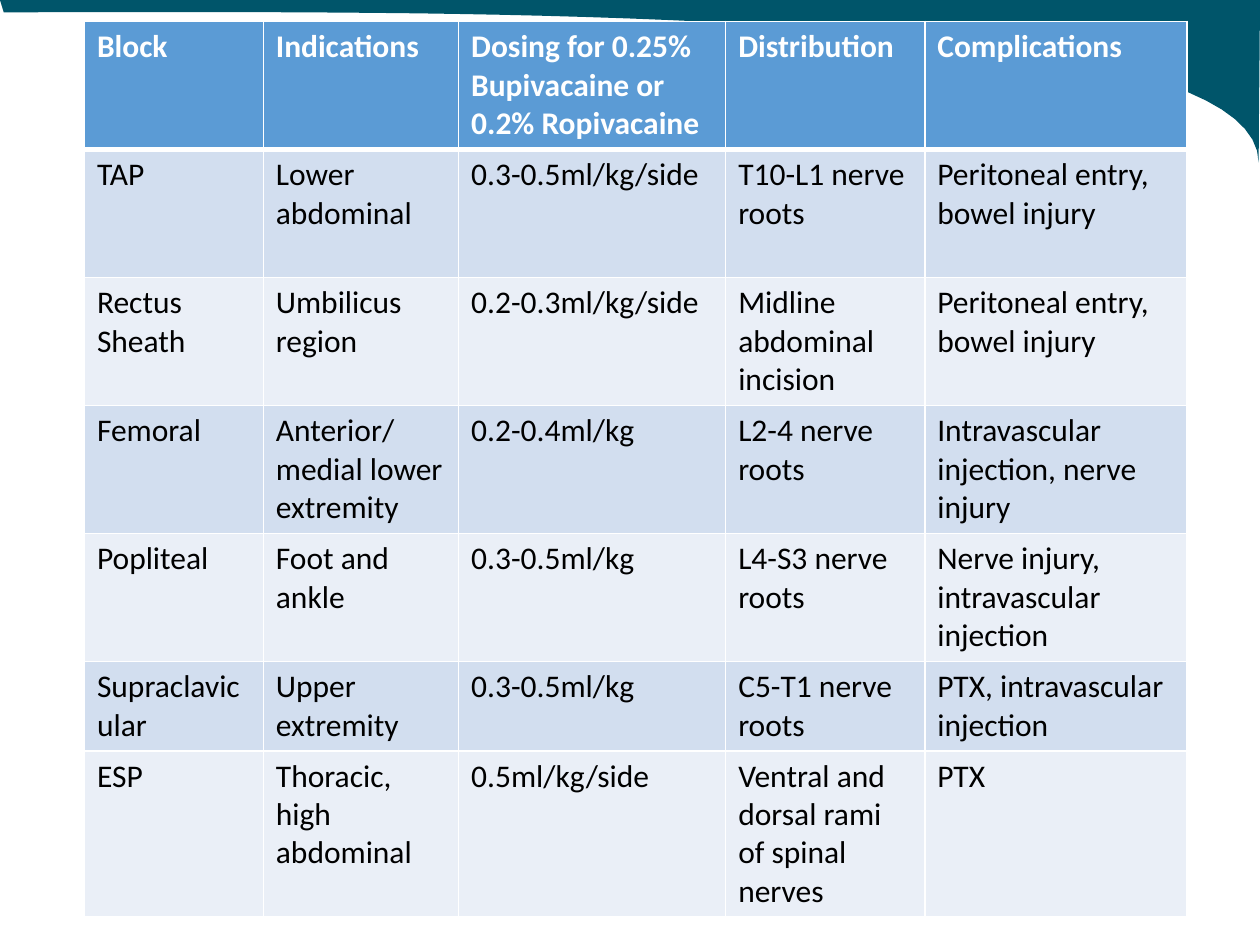
from typing import NamedTuple

import pptx
import pptx.dml.color
import pptx.oxml
import pptx.oxml.ns
import pptx.util

SLIDE_WIDTH = pptx.util.Inches(10)
SLIDE_HEIGHT = pptx.util.Inches(7.5)
FONT_NAME = "Calibri"
FONT_SIZE = 18
LINE_HEIGHT = 0.305
CELL_PADDING = 0.1
COLUMN_WIDTHS = (1.42, 1.55, 2.12, 1.58, 2.08)
HEADER_FILL = "5B9BD5"
BAND_FILLS = ("D2DEEF", "EAEFF7")
CURVE_STEPS = 40


class Point(NamedTuple):
    """A place on the slide, as shares of its width and height."""
    x: float
    y: float


class BlockRow(NamedTuple):
    lines: int
    texts: tuple[str, str, str, str, str]


ROWS = (
    BlockRow(3, ("Block", "Indications", "Dosing for 0.25% Bupivacaine or 0.2% Ropivacaine",
                 "Distribution", "Complications")),
    BlockRow(3, ("TAP", "Lower abdominal", "0.3-0.5ml/kg/side",
                 "T10-L1 nerve roots", "Peritoneal entry, bowel injury")),
    BlockRow(3, ("Rectus Sheath", "Umbilicus region", "0.2-0.3ml/kg/side",
                 "Midline abdominal incision", "Peritoneal entry, bowel injury")),
    BlockRow(3, ("Femoral", "Anterior/medial lower extremity", "0.2-0.4ml/kg",
                 "L2-4 nerve roots", "Intravascular injection, nerve injury")),
    BlockRow(3, ("Popliteal", "Foot and ankle", "0.3-0.5ml/kg",
                 "L4-S3 nerve roots", "Nerve injury, intravascular injection")),
    BlockRow(2, ("Supraclavicular", "Upper extremity", "0.3-0.5ml/kg",
                 "C5-T1 nerve roots", "PTX, intravascular injection")),
    BlockRow(4, ("ESP", "Thoracic, high abdominal", "0.5ml/kg/side",
                 "Ventral and dorsal rami of spinal nerves", "PTX")),
)


def color(value: str) -> pptx.dml.color.RGBColor:
    return pptx.dml.color.RGBColor.from_string(value)


def curve_points(*controls: Point) -> list[Point]:
    """Sample a cubic Bezier curve, leaving out its start."""
    points = []
    for step in range(1, CURVE_STEPS + 1):
        t = step / CURVE_STEPS
        weights = ((1 - t) ** 3, 3 * t * (1 - t) ** 2, 3 * t ** 2 * (1 - t), t ** 3)
        points.append(Point(
            sum(weight * point.x for weight, point in zip(weights, controls)),
            sum(weight * point.y for weight, point in zip(weights, controls)),
        ))
    return points


def add_corner_swoosh(slide) -> None:
    corner, tip, left_end = Point(1, 0), Point(0.999, 0.172), Point(0.003, 0.013)
    outline = [
        corner,
        *curve_points(corner, Point(1, 0.019), Point(0.999, 0.153), tip),
        *curve_points(tip, Point(0.998, 0), Point(0.336, 0.013), left_end),
    ]
    builder = slide.shapes.build_freeform(0, 0)
    builder.add_line_segments(
        [(point.x * SLIDE_WIDTH, point.y * SLIDE_HEIGHT) for point in outline], close=True
    )
    shape = builder.convert_to_shape()
    shape.shadow.inherit = False
    shape.fill.solid()
    shape.fill.fore_color.rgb = color("00556A")
    shape.line.fill.background()


def set_borders(cell, top: float, bottom: float) -> None:
    properties = cell._tc.get_or_add_tcPr()
    sides = (("lnL", 1), ("lnR", 1), ("lnT", top), ("lnB", bottom))
    for position, (tag, width) in enumerate(sides):
        border = pptx.oxml.parse_xml(
            f'<a:{tag} {pptx.oxml.ns.nsdecls("a")} w="{pptx.util.Pt(width)}">'
            '<a:solidFill><a:srgbClr val="FFFFFF"/></a:solidFill>'
            f'</a:{tag}>'
        )
        properties.insert(position, border)


def format_cell(cell, text: str, row_index: int) -> None:
    is_header = row_index == 0
    cell.fill.solid()
    cell.fill.fore_color.rgb = color(HEADER_FILL if is_header else BAND_FILLS[(row_index - 1) % 2])
    set_borders(cell, top=3 if row_index == 1 else 1, bottom=3 if is_header else 1)
    cell.text_frame.text = text
    font = cell.text_frame.paragraphs[0].runs[0].font
    font.name = FONT_NAME
    font.size = pptx.util.Pt(FONT_SIZE)
    font.bold = is_header
    font.color.rgb = color("FFFFFF" if is_header else "000000")


def add_block_table(slide) -> None:
    heights = [row.lines * LINE_HEIGHT + CELL_PADDING for row in ROWS]
    table = slide.shapes.add_table(
        len(ROWS), len(COLUMN_WIDTHS),
        pptx.util.Inches(0.67), pptx.util.Inches(0.17),
        pptx.util.Inches(sum(COLUMN_WIDTHS)), pptx.util.Inches(sum(heights)),
    ).table
    for column, width in zip(table.columns, COLUMN_WIDTHS):
        column.width = pptx.util.Inches(width)
    for row_index, (block_row, height) in enumerate(zip(ROWS, heights)):
        table.rows[row_index].height = pptx.util.Inches(height)
        for column_index, text in enumerate(block_row.texts):
            format_cell(table.cell(row_index, column_index), text, row_index)


def main() -> None:
    presentation = pptx.Presentation()
    presentation.slide_width = SLIDE_WIDTH
    presentation.slide_height = SLIDE_HEIGHT
    slide = presentation.slides.add_slide(presentation.slide_layouts[6])
    add_corner_swoosh(slide)
    add_block_table(slide)
    presentation.save("out.pptx")


if __name__ == "__main__":
    main()
